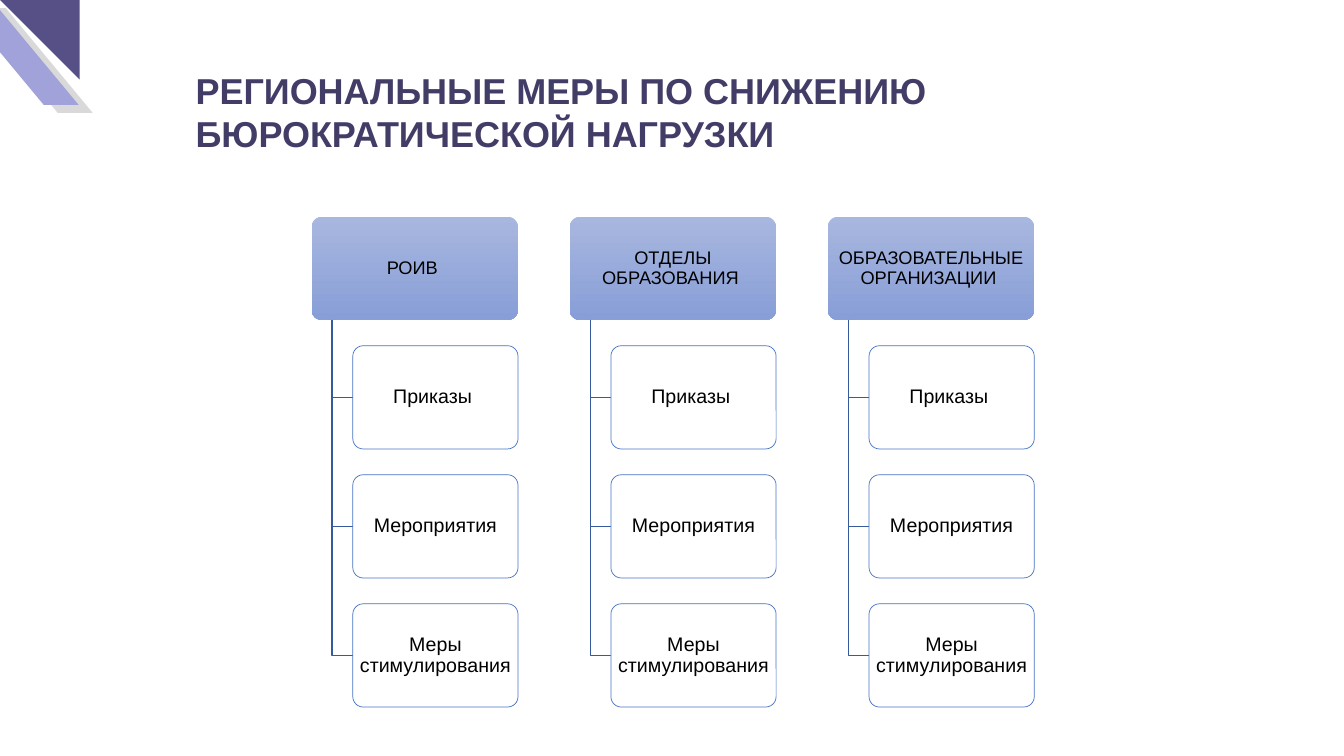
from dataclasses import dataclass
from pptx import Presentation
from pptx.dml.color import RGBColor
from pptx.enum import shapes, text
from pptx.util import Inches, Pt

TITLE = "РЕГИОНАЛЬНЫЕ МЕРЫ ПО СНИЖЕНИЮ БЮРОКРАТИЧЕСКОЙ НАГРУЗКИ"
STEPS = ["Приказы ", " Мероприятия ", "Меры стимулирования "]
LEVELS = {
    "РОИВ ": STEPS,
    "ОТДЕЛЫ ОБРАЗОВАНИЯ ": STEPS,
    "ОБРАЗОВАТЕЛЬНЫЕ ОРГАНИЗАЦИИ ": STEPS,
}


@dataclass(frozen=True)
class Theme:
    font: str = "Arial"
    title: str = "423D67"
    ink: str = "000000"
    paper: str = "FFFFFF"
    top: str = "A8B7DF"
    base: str = "889ED7"
    edge: str = "4472C4"
    link: str = "365B9D"
    shade: str = "D9D9D9"
    lilac: str = "A2A2DA"
    plum: str = "565087"
    title_size: float = 25.7
    head_size: float = 13
    step_size: float = 14


LOOK = Theme()
KIND = shapes.MSO_SHAPE
WIDE, HIGH = 13.33, 7.5
LEFT, TOP = 3.09, 2.15
COL, ROW = 2.56, 1.28
BOX_W, BOX_H = 0.8 * COL, 0.8 * ROW
STEM, INDENT = 0.08 * COL, 0.16 * COL


def color(code):
    return RGBColor.from_string(code)


def style(para, size, ink, bold=False):
    para.font.name = LOOK.font
    para.font.size = Pt(size)
    para.font.bold = bold
    para.font.color.rgb = color(ink)


def add(slide, kind, x, y, w, h, fill=None):
    shape = slide.shapes.add_shape(kind, *map(Inches, (x, y, w, h)))
    shape.shadow.inherit = False
    shape.line.fill.background()
    if fill:
        shape.fill.solid()
        shape.fill.fore_color.rgb = color(fill)
    return shape


def corner(slide):
    for x, y, fill in [(-0.29, 0.08, LOOK.shade), (-0.43, 0, LOOK.lilac)]:
        band = add(slide, KIND.PARALLELOGRAM, x, y, 1.21, 1.04, fill)
        band.adjustments[0] = 0.83
        band._element.spPr.xfrm.set("flipH", "1")
    wedge = add(slide, KIND.RIGHT_TRIANGLE, 0, 0, 0.79, 0.79, LOOK.plum)
    wedge._element.spPr.xfrm.set("flipH", "1")
    wedge._element.spPr.xfrm.set("flipV", "1")


def heading(slide):
    title = slide.shapes.title
    title.left, title.top = Inches(1.84), Inches(0.63)
    title.width, title.height = Inches(8.34), Inches(0.96)
    frame = title.text_frame
    frame.text = TITLE
    frame.word_wrap = True
    frame.vertical_anchor = text.MSO_ANCHOR.TOP
    para = frame.paragraphs[0]
    para.alignment = text.PP_ALIGN.LEFT
    para.line_spacing = 1.0
    style(para, LOOK.title_size, LOOK.title, True)


def card(slide, words, x, y, w, size, fill=None):
    box = add(slide, KIND.ROUNDED_RECTANGLE, x, y, w, BOX_H, fill)
    box.adjustments[0] = 0.1
    frame = box.text_frame
    frame.text = words
    frame.word_wrap = True
    frame.vertical_anchor = text.MSO_ANCHOR.MIDDLE
    frame.margin_left = frame.margin_right = Inches(0.03)
    frame.margin_top = frame.margin_bottom = Inches(0.02)
    para = frame.paragraphs[0]
    para.alignment = text.PP_ALIGN.CENTER
    para.line_spacing = 0.9
    style(para, size, LOOK.ink)
    return box


def branch(slide, x, y, end_x, end_y):
    pen = slide.shapes.build_freeform(Inches(x), Inches(y))
    turns = [(x, end_y), (end_x, end_y)]
    pen.add_line_segments([(Inches(a), Inches(b)) for a, b in turns], close=False)
    path = pen.convert_to_shape()
    path.shadow.inherit = False
    path.fill.background()
    path.line.color.rgb = color(LOOK.link)
    path.line.width = Pt(1)


def column(slide, x, head, steps):
    box = card(slide, head, x, TOP, BOX_W, LOOK.head_size)
    box.fill.gradient()
    box.fill.gradient_angle = 270
    for stop, code in zip(box.fill.gradient_stops, (LOOK.top, LOOK.base)):
        stop.color.rgb = color(code)
    for row, words in enumerate(steps, 1):
        y = TOP + row * ROW
        branch(slide, x + STEM, TOP + BOX_H, x + INDENT, y + BOX_H / 2)
        step = card(slide, words, x + INDENT, y, BOX_W - INDENT,
                    LOOK.step_size, LOOK.paper)
        step.line.color.rgb = color(LOOK.edge)
        step.line.width = Pt(0.5)


def main():
    deck = Presentation()
    deck.slide_width, deck.slide_height = Inches(WIDE), Inches(HIGH)
    slide = deck.slides.add_slide(deck.slide_layouts[5])
    corner(slide)
    heading(slide)
    for col, (head, steps) in enumerate(LEVELS.items()):
        column(slide, LEFT + col * COL, head, steps)
    deck.save("out.pptx")


if __name__ == "__main__":
    main()
